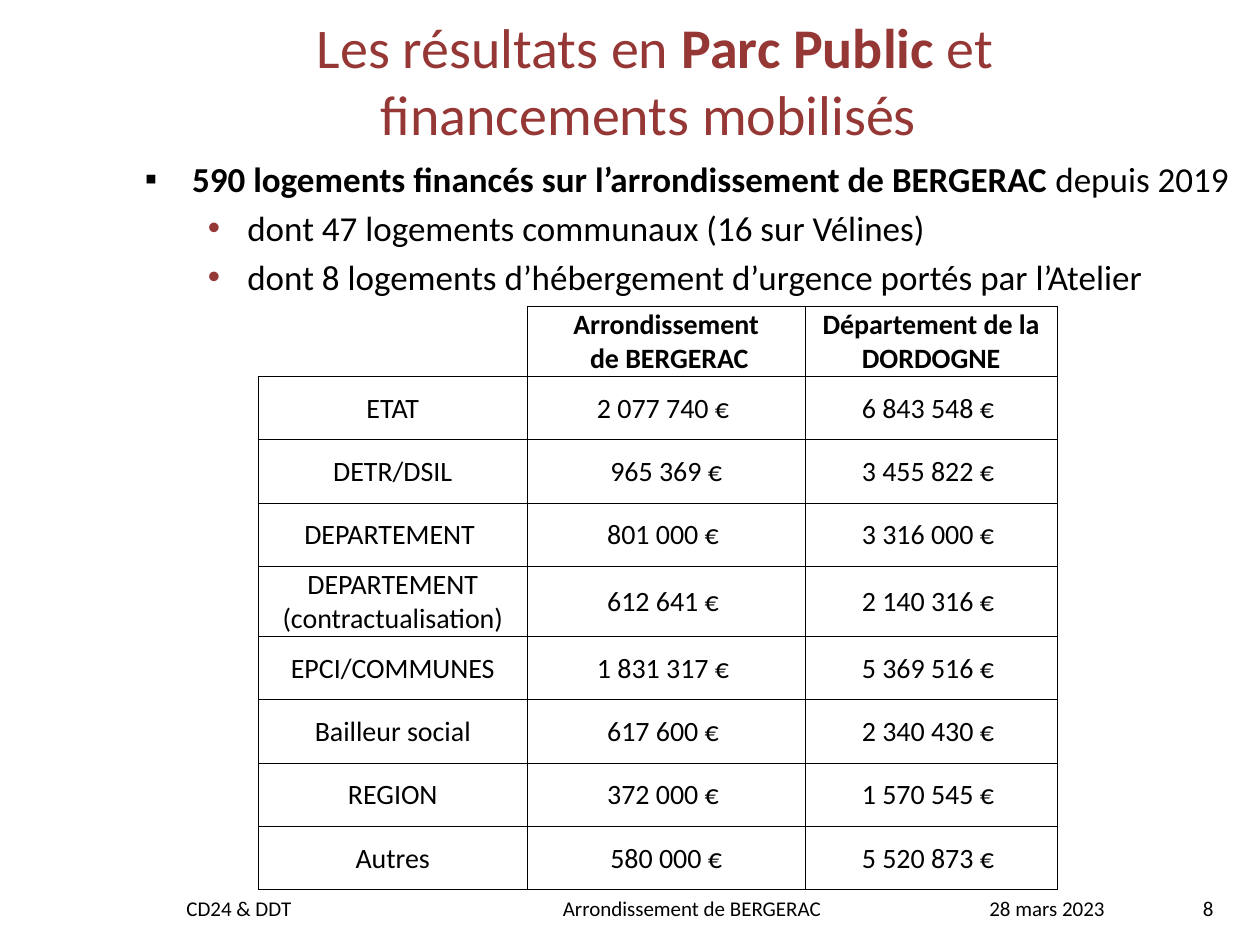
import pptx
import pptx.util
import pptx.dml.color
import pptx.enum.text
import pptx.oxml
import pptx.oxml.ns

Pt = pptx.util.Pt
Align = pptx.enum.text.PP_ALIGN
Anchor = pptx.enum.text.MSO_ANCHOR

COLORS = {"text": "000000", "accent": "953735"}
FONT = "Calibri"

# Content: runs are (text, bold)
TITLE = [("Les résultats en ", False), ("Parc Public ", True),
         ("et financements mobilisés ", False)]
BULLETS = [
    (0, [("590 logements financés sur l’arrondissement de BERGERAC ", True),
         ("depuis 2019", False)]),
    (1, [("dont 47 logements communaux (16 sur Vélines)", False)]),
    (1, [("dont 8 logements d’hébergement d’urgence portés par l’Atelier", False)]),
]
# Per level: margin, hanging indent, bullet, bullet colour
LEVELS = [(27, 27, "▪", "text"), (58.5, 22.5, "•", "accent")]
FUNDING = [
    ("", "Arrondissement\v de BERGERAC", "Département de la DORDOGNE"),
    ("ETAT", "2 077 740 € ", "6 843 548 € "),
    ("DETR/DSIL", "965 369 €", "3 455 822 € "),
    ("DEPARTEMENT ", "801 000 € ", "3 316 000 € "),
    ("DEPARTEMENT (contractualisation)", "612 641 € ", "2 140 316 € "),
    ("EPCI/COMMUNES", "1 831 317 € ", "5 369 516 € "),
    ("Bailleur social", "617 600 € ", "2 340 430 € "),
    ("REGION", "372 000 € ", "1 570 545 € "),
    ("Autres", "580 000 €", "5 520 873 € "),
]
COLUMN_WIDTHS = [153.7, 158.8, 144]
ROW_HEIGHT, TALL_ROW_HEIGHT = 36.2, 40
TALL_ROWS = (0, 4)
# Footer: text, left, width, alignment
FOOTERS = [
    ("CD24 & DDT", 99.4, 187, Align.LEFT),
    ("Arrondissement de BERGERAC", 314.6, 204.5, Align.LEFT),
    ("28 mars 2023", 541.4, 113.8, Align.CENTER),
    ("8", 645.8, 54.7, Align.RIGHT),
]


def set_values(target, values):
    for name, value in values.items():
        setattr(target, name, value)


def place(shape, left, top, width, height):
    set_values(shape, {"left": Pt(left), "top": Pt(top),
                       "width": Pt(width), "height": Pt(height)})


def write(paragraph, runs, size, color="text", alignment=Align.LEFT):
    paragraph.alignment = alignment
    for text, bold in runs:
        for index, line in enumerate(text.split("\v")):
            if index:
                paragraph.add_line_break()
            run = paragraph.add_run()
            run.text = line
            set_values(run.font, {"name": FONT, "size": Pt(size), "bold": bold})
            run.font.color.rgb = pptx.dml.color.RGBColor.from_string(COLORS[color])


def add_bullet(paragraph, level):
    margin, hanging, character, color = LEVELS[level]
    paragraph.level = level
    properties = paragraph._p.get_or_add_pPr()
    properties.set("marL", str(Pt(margin)))
    properties.set("indent", str(-Pt(hanging)))
    namespace = pptx.oxml.ns.nsdecls("a")
    for xml in (
        f'<a:buClr {namespace}><a:srgbClr val="{COLORS[color]}"/></a:buClr>',
        f'<a:buFont {namespace} typeface="Arial"/>',
        f'<a:buChar {namespace} char="{character}"/>',
    ):
        properties.append(pptx.oxml.parse_xml(xml))


def add_borders(cell, sides):
    properties = cell._tc.get_or_add_tcPr()
    for position, side in enumerate(sides):
        properties.insert(position, pptx.oxml.parse_xml(
            f'<a:ln{side} {pptx.oxml.ns.nsdecls("a")} w="{Pt(0.5)}"><a:solidFill>'
            f'<a:srgbClr val="{COLORS["text"]}"/></a:solidFill></a:ln{side}>'))


presentation = pptx.Presentation()
set_values(presentation, {"slide_width": Pt(720), "slide_height": Pt(540)})
slide = presentation.slides.add_slide(presentation.slide_layouts[1])
title, body = slide.placeholders

# Title
place(title, 105, 11.5, 538.6, 68)
set_values(title.text_frame, {"vertical_anchor": Anchor.MIDDLE, "word_wrap": True,
                              "auto_size": pptx.enum.text.MSO_AUTO_SIZE.NONE})
write(title.text_frame.paragraphs[0], TITLE, 32, "accent", Align.CENTER)

# Bullet list
place(body, 75.6, 86.4, 641.5, 112.3)
set_values(body.text_frame, {"word_wrap": True,
                             "auto_size": pptx.enum.text.MSO_AUTO_SIZE.NONE})
for index, (level, runs) in enumerate(BULLETS):
    frame = body.text_frame
    paragraph = frame.add_paragraph() if index else frame.paragraphs[0]
    write(paragraph, runs, 20)
    paragraph.space_before = Pt(4 if index else 0)
    add_bullet(paragraph, level)

# Funding table
heights = [TALL_ROW_HEIGHT if index in TALL_ROWS else ROW_HEIGHT
           for index in range(len(FUNDING))]
table = slide.shapes.add_table(
    len(FUNDING), len(COLUMN_WIDTHS), Pt(147.6), Pt(175),
    Pt(sum(COLUMN_WIDTHS)), Pt(sum(heights))).table
set_values(table, {"first_row": False, "horz_banding": False})
for column, width in zip(table.columns, COLUMN_WIDTHS):
    column.width = Pt(width)
for row_index, (row, height) in enumerate(zip(table.rows, heights)):
    row.height = Pt(height)
    for cell, text in zip(row.cells, FUNDING[row_index]):
        cell.fill.background()
        set_values(cell, {"vertical_anchor": Anchor.MIDDLE, "margin_left": Pt(0.7),
                          "margin_right": Pt(0.7), "margin_top": Pt(0.7),
                          "margin_bottom": 0})
        write(cell.text_frame.paragraphs[0], [(text, row_index == 0)], 16,
              alignment=Align.CENTER)
        add_borders(cell, "LRTB" if text else "RB")

# Footer
for text, left, width, alignment in FOOTERS:
    box = slide.shapes.add_textbox(Pt(left), Pt(508.3), Pt(width), Pt(22))
    box.text_frame.word_wrap = True
    write(box.text_frame.paragraphs[0], [(text, False)], 12, alignment=alignment)

presentation.save("out.pptx")
